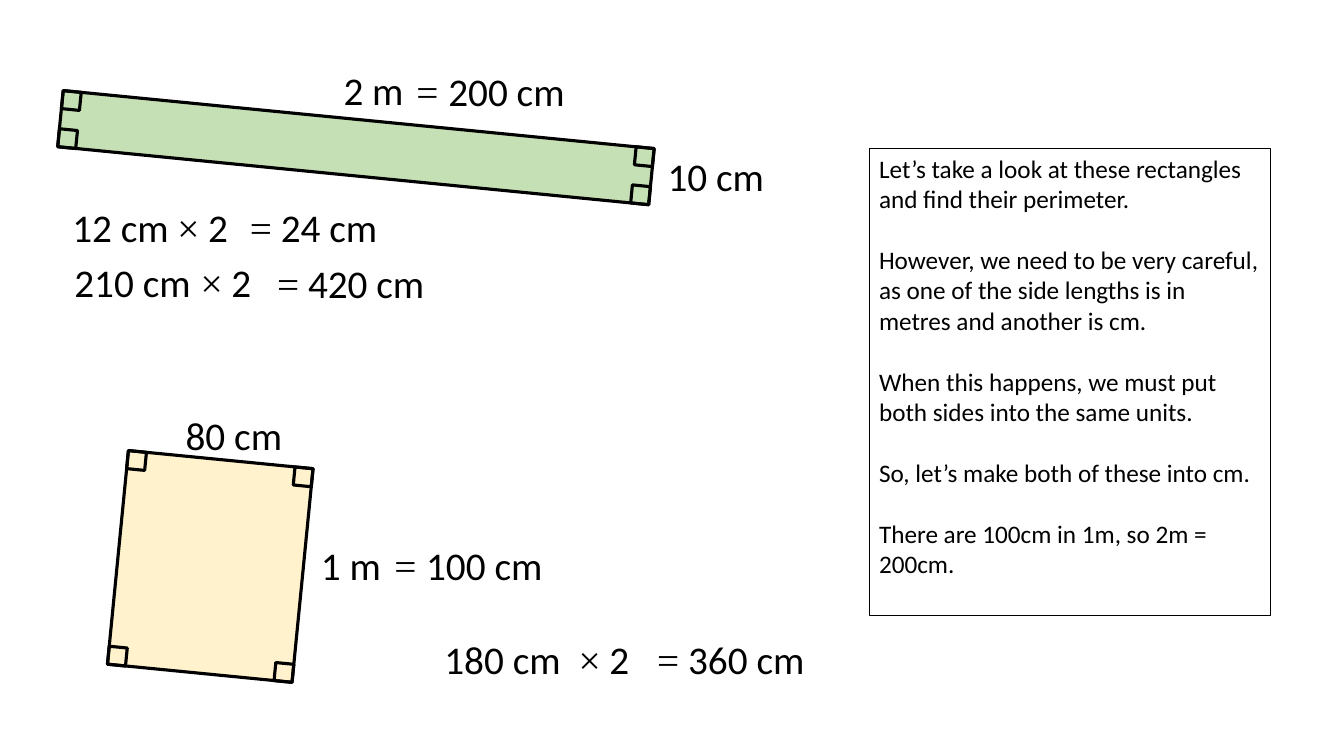
from dataclasses import dataclass
from itertools import product
from math import cos, radians, sin

from pptx import Presentation
from pptx.dml.color import RGBColor
from pptx.enum.shapes import MSO_SHAPE
from pptx.enum.text import MSO_AUTO_SIZE, PP_ALIGN
from pptx.util import Inches, Pt


@dataclass(frozen=True)
class Theme:
    ink: RGBColor = RGBColor(0, 0, 0)
    green: RGBColor = RGBColor(0xC5, 0xE0, 0xB4)
    cream: RGBColor = RGBColor(0xFF, 0xF2, 0xCC)
    text_font: str = "Calibri"
    symbol_font: str = "Times New Roman"
    label_size: Pt = Pt(28)
    note_size: Pt = Pt(18)
    blank_line: Pt = Pt(22)
    outline: Pt = Pt(2.25)
    frame: Pt = Pt(0.75)


THEME = Theme()
TILT = 95.6
MARK = 0.18
LABEL_HEIGHT = 0.57
CENTER, LEFT = PP_ALIGN.CENTER, PP_ALIGN.LEFT


def add_tilted_box(slide, center_x, center_y, width, height, fill=None):
    box = slide.shapes.add_shape(
        MSO_SHAPE.RECTANGLE, Inches(center_x - width / 2),
        Inches(center_y - height / 2), Inches(width), Inches(height))
    box.rotation = TILT
    box.shadow.inherit = False
    if fill is None:
        box.fill.background()
    else:
        box.fill.solid()
        box.fill.fore_color.rgb = fill
    box.line.color.rgb = THEME.ink
    box.line.width = THEME.outline


def add_right_angled_rectangle(slide, left, top, width, height, fill):
    """Draw a tilted rectangle with a right-angle mark in each corner."""
    center_x, center_y = left + width / 2, top + height / 2
    add_tilted_box(slide, center_x, center_y, width, height, fill)
    cosine, sine = cos(radians(TILT)), sin(radians(TILT))
    for side_x, side_y in product((-1, 1), repeat=2):
        dx = side_x * (width - MARK) / 2
        dy = side_y * (height - MARK) / 2
        add_tilted_box(slide, center_x + dx * cosine - dy * sine,
                       center_y + dx * sine + dy * cosine, MARK, MARK)


def add_label(slide, left, top, width, text, symbol="", align=LEFT, wrap=True):
    """Write a measurement, led by an optional operator in the symbol font."""
    label = slide.shapes.add_textbox(
        Inches(left), Inches(top), Inches(width), Inches(LABEL_HEIGHT))
    frame = label.text_frame
    frame.word_wrap = wrap
    frame.auto_size = MSO_AUTO_SIZE.SHAPE_TO_FIT_TEXT
    paragraph = frame.paragraphs[0]
    paragraph.alignment = align
    paragraph.font.size = THEME.label_size
    paragraph.font.color.rgb = THEME.ink
    if not symbol:
        paragraph.font.name = THEME.text_font
        paragraph.add_run().text = text
        return
    for part, font in ((symbol, THEME.symbol_font), (text, THEME.text_font)):
        run = paragraph.add_run()
        run.text = part
        run.font.name = font


def add_doubling(slide, left, top, width, side_sum, times_left,
                 equals_left, equals_width, total, equals_drop=0):
    """Write one line of working: the side sum, times two, and its total."""
    add_label(slide, left, top, width, side_sum, wrap=False)
    add_label(slide, times_left, top, 1.55, " 2", "×")
    add_label(slide, equals_left, top + equals_drop, equals_width,
              f" {total}", "=", wrap=False)


def add_long_rectangle(slide):
    add_right_angled_rectangle(slide, 3.25, -1.48, 0.56, 5.89, THEME.green)
    add_label(slide, 3.3, 0.61, 0.81, "2 m", align=CENTER, wrap=False)
    add_label(slide, 3.79, 0.62, 2.15, "200 cm", "= ", CENTER)
    add_label(slide, 6.46, 1.46, 1.28, "10 cm", align=CENTER)
    add_doubling(slide, 0.62, 1.97, 1.17, "12 cm", 1.66, 2.38, 1.55, "24 cm")
    add_doubling(slide, 0.64, 2.51, 1.37, "210 cm", 1.89, 2.65, 1.75,
                 "420 cm", equals_drop=0.01)


def add_short_rectangle(slide):
    add_right_angled_rectangle(slide, 1.02, 4.7, 2.13, 1.84, THEME.cream)
    add_label(slide, 1.34, 4.03, 1.96, "80 cm", align=CENTER)
    add_label(slide, 2.84, 5.32, 1.28, "1 m", align=CENTER)
    add_label(slide, 3.57, 5.32, 2.15, "100 cm", "= ", CENTER)
    add_doubling(slide, 4.31, 6.25, 1.37, "180 cm", 5.64, 6.42, 1.75, "360 cm")


def add_explanation(slide, left, top, width, height):
    explanation = slide.shapes.add_textbox(
        Inches(left), Inches(top), Inches(width), Inches(height))
    explanation.line.color.rgb = THEME.ink
    explanation.line.width = THEME.frame
    frame = explanation.text_frame
    frame.word_wrap = True
    steps = (
        "Let’s take a look at these rectangles and find their perimeter.",
        "However, we need to be very careful, as one of the side lengths "
        "is in metres and another is cm.",
        "When this happens, we must put both sides into the same units.",
        "So, let’s make both of these into cm.",
        "There are 100cm in 1m, so 2m = 200cm.",
    )
    for index, step in enumerate(steps):
        paragraph = frame.add_paragraph() if index else frame.paragraphs[0]
        paragraph.text = step
        paragraph.font.name = THEME.text_font
        paragraph.font.size = THEME.note_size
        paragraph.font.color.rgb = THEME.ink
        if index:
            paragraph.space_before = THEME.blank_line


def main():
    deck = Presentation()
    deck.slide_width, deck.slide_height = Inches(13.33), Inches(7.5)
    slide = deck.slides.add_slide(deck.slide_layouts[6])
    add_long_rectangle(slide)
    add_short_rectangle(slide)
    add_explanation(slide, 8.62, 1.47, 3.98, 4.64)
    deck.save("out.pptx")


if __name__ == "__main__":
    main()
